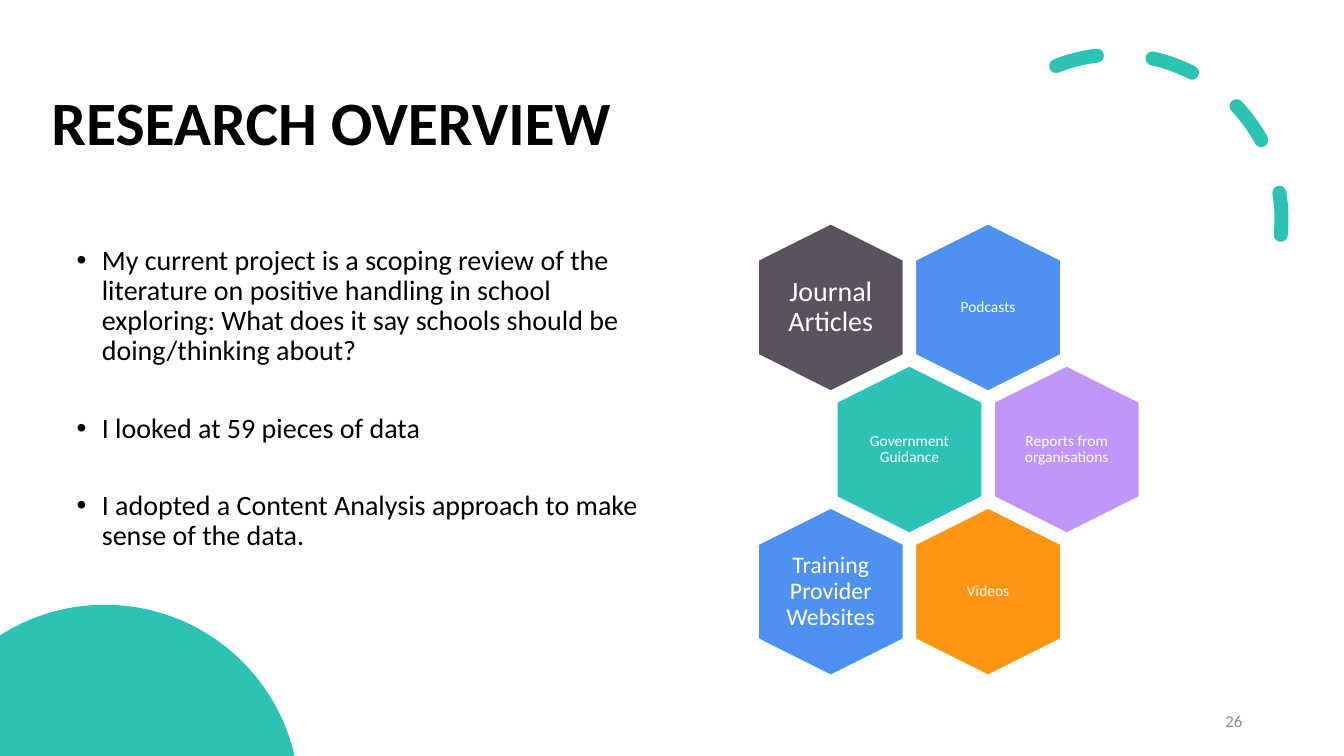
from dataclasses import dataclass
from math import acos, asin, cos, pi, sin

from lxml.etree import SubElement
from pptx import Presentation
from pptx.dml.color import RGBColor
from pptx.enum.dml import MSO_LINE
from pptx.enum.shapes import MSO_SHAPE as Shape
from pptx.enum.text import MSO_ANCHOR as Anchor, MSO_AUTO_SIZE as Fit, PP_ALIGN as Align
from pptx.oxml.ns import qn
from pptx.util import Inches, Pt

# Content
TITLE = "RESEARCH OVERVIEW"
POINTS = [
    "My current project is a scoping review of the literature on positive handling "
    "in school exploring: What does it say schools should be doing/thinking about?",
    "I looked at 59 pieces of data",
    "I adopted a Content Analysis approach to make sense of the data.",
]
PAGE = "26"
# Rows of hexagons: label, fill, text size
HIVE = [
    [("Journal Articles", "slate", 20), ("Podcasts", "blue", 11)],
    [("Government Guidance", "teal", 11), ("Reports from organisations", "lilac", 11)],
    [("Training Provider Websites", "blue", 17), ("Videos", "amber", 11)],
]


@dataclass(frozen=True)
class Theme:
    font: str = "Calibri"
    black: str = "000000"
    white: str = "FFFFFF"
    gray: str = "8C8C8C"
    teal: str = "2CC3B4"
    blue: str = "4E91F0"
    slate: str = "5B5260"
    lilac: str = "C097F8"
    amber: str = "FF9514"
    title: int = 44
    body: int = 20
    page: int = 12


theme = Theme()


def rgb(name):
    return RGBColor.from_string(getattr(theme, name))


def apply(item, values):
    for key, value in values.items():
        setattr(item, key, value)


def place(shape, left, top, width, height):
    box = dict(left=left, top=top, width=width, height=height)
    apply(shape, {key: Inches(value) for key, value in box.items()})


def write(shape, lines, size, color, bold=False, bullet=False, inset=None,
          anchor=Anchor.MIDDLE, **style):
    frame = shape.text_frame
    frame.text = "\n".join(lines)
    apply(frame, dict(word_wrap=True, auto_size=Fit.NONE, vertical_anchor=anchor))
    if inset is not None:
        sides = ("left", "right", "top", "bottom")
        apply(frame, {f"margin_{side}": Inches(inset) for side in sides})
    for para in frame.paragraphs:
        if bullet:
            props = para._p.get_or_add_pPr()
            props.set("marL", str(Inches(0.38)))
            props.set("indent", str(Inches(-0.25)))
            SubElement(props, qn("a:buFont"), typeface="Arial")
            SubElement(props, qn("a:buChar"), char="•")
        apply(para, dict(space_before=Pt(0), line_spacing=0.9) | style)
        apply(para.font, dict(name=theme.font, size=Pt(size), bold=bold))
        para.font.color.rgb = rgb(color)


def paint(shape, fill, edge=None):
    shape.shadow.inherit = False
    shape.fill.solid()
    shape.fill.fore_color.rgb = rgb(fill)
    if edge:
        shape.line.color.rgb = rgb(edge)
        shape.line.width = Pt(1)
    else:
        shape.line.fill.background()


deck = Presentation()
deck.slide_width, deck.slide_height = Inches(13.33), Inches(7.5)
slide = deck.slides.add_slide(deck.slide_layouts[1])
shapes = slide.shapes
title, body = slide.placeholders

# Dashed arc
arc = shapes.add_shape(Shape.ARC, *map(Inches, (9.44, 0.54, 3.27, 3.27)))
arc.adjustments[0], arc.adjustments[1] = 144.418, 0
arc.rotation = 66.1
arc._element.spPr.xfrm.set("flipH", "1")
arc.shadow.inherit = False
arc.fill.background()
arc.line.color.rgb = rgb("teal")
apply(arc.line, dict(width=Pt(10), dash_style=MSO_LINE.DASH))
arc.line._get_or_add_ln().set("cap", "rnd")

# Corner disc, cut off by the slide edges
mid, high, radius, floor, steps = 1.04, 7.93, 1.93, 7.5, 90
start = pi + acos(mid / radius)
end = 2 * pi - asin((high - floor) / radius)
turns = [start + (end - start) * n / steps for n in range(steps + 1)]
rim = [(mid + radius * cos(t), high + radius * sin(t)) for t in turns]
pen = shapes.build_freeform(0, Inches(floor), scale=1.0)
pen.add_line_segments([(Inches(x), Inches(y)) for x, y in rim], close=True)
paint(pen.convert_to_shape(), "teal")

# Title, list and page number
place(title, 0.41, 0.52, 11.99, 1.45)
write(title, [TITLE], theme.title, "black", bold=True, alignment=Align.LEFT)
place(body, 0.53, 2.39, 6.08, 4.37)
write(body, POINTS, theme.body, "black", bullet=True, anchor=Anchor.TOP,
      space_after=Pt(33.6))
page = shapes.add_textbox(*map(Inches, (9.42, 6.95, 3, 0.4)))
write(page, [PAGE], theme.page, "gray", alignment=Align.RIGHT, line_spacing=1.0)

# Honeycomb: every second row moves right by half a step
LONG, SHORT = 1.66, 1.44
STEP, DROP = 1.56, 1.41
WIDE, TALL = 0.99, 1.14
for row, cells in enumerate(HIVE):
    for col, (label, fill, size) in enumerate(cells):
        x = 8.24 + STEP * (col + row % 2 / 2)
        y = 3.05 + DROP * row
        cell = shapes.add_shape(Shape.HEXAGON, 0, 0, 0, 0)
        place(cell, x - LONG / 2, y - SHORT / 2, LONG, SHORT)
        cell.rotation = 90
        paint(cell, fill, "white")
        note = shapes.add_textbox(0, 0, 0, 0)
        place(note, x - WIDE / 2, y - TALL / 2, WIDE, TALL)
        write(note, [label], size, "white", inset=0, alignment=Align.CENTER)

deck.save("out.pptx")
